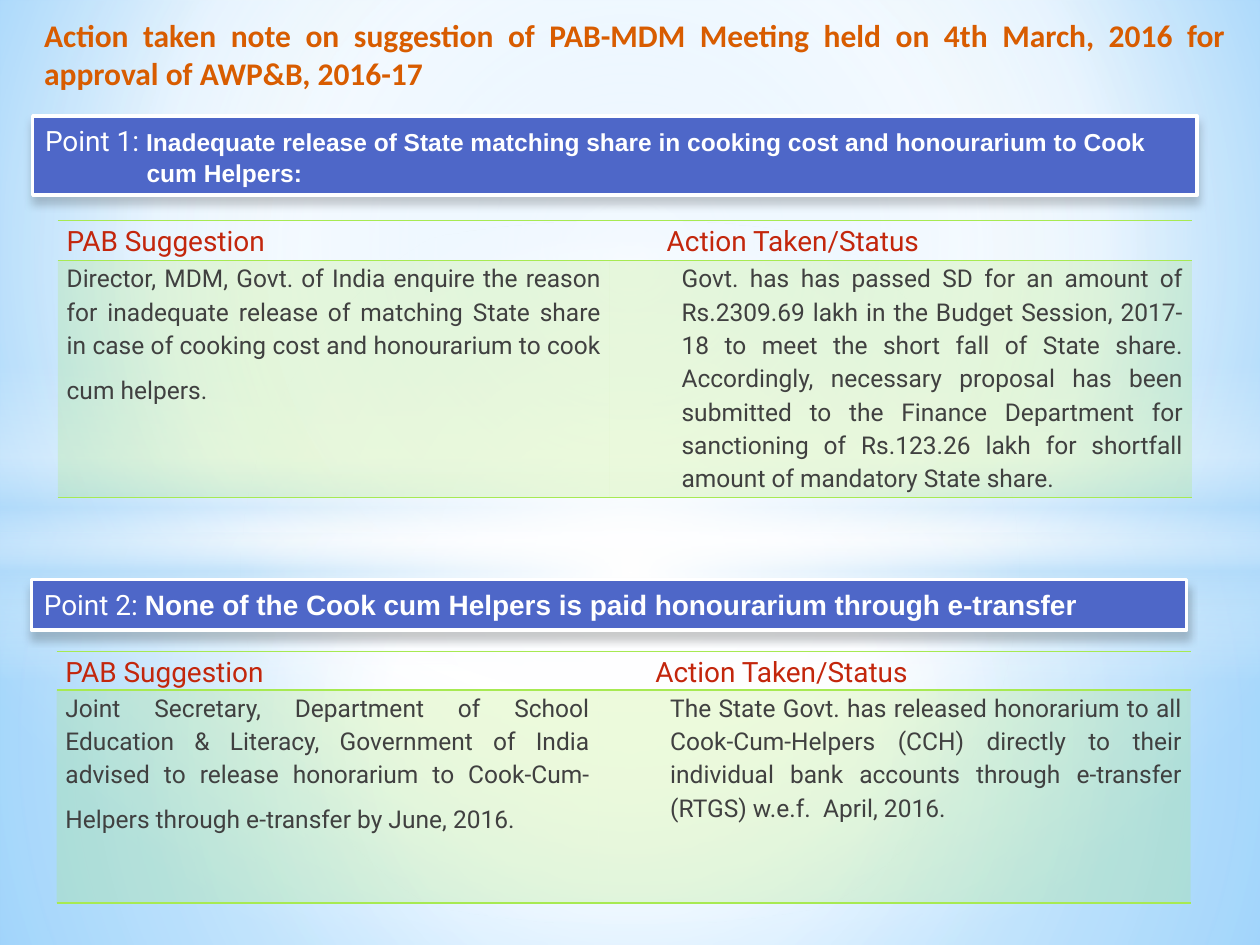
from dataclasses import dataclass

from lxml import etree
from pptx import Presentation
from pptx.dml.color import RGBColor
from pptx.enum.shapes import MSO_SHAPE
from pptx.enum.text import MSO_ANCHOR, MSO_AUTO_SIZE, PP_ALIGN
from pptx.oxml import parse_xml
from pptx.oxml.ns import qn
from pptx.util import Pt

RECT, OVAL = MSO_SHAPE.RECTANGLE, MSO_SHAPE.OVAL
TOP, MIDDLE = MSO_ANCHOR.TOP, MSO_ANCHOR.MIDDLE
GROW = MSO_AUTO_SIZE.SHAPE_TO_FIT_TEXT
LEFT, JUSTIFY = PP_ALIGN.LEFT, PP_ALIGN.JUSTIFY
NS = "http://schemas.openxmlformats.org/drawingml/2006/main"
PLAIN = "{2D5ABB26-0587-4C30-8999-92F81FD0307C}"
HEX = {
    "white": "FFFFFF", "black": "000000", "sky": "B4DCFA",
    "pale": "9ED5FF", "deep": "5BB9FF", "title": "D85C00",
    "bar": "4E67C8", "lime": "A7EA52", "head": "C3260C", "body": "404040",
}


@dataclass
class Run:
    text: str
    size: float
    font: str
    color: str
    bold: bool = False


@dataclass
class Para:
    runs: list[Run]
    align: PP_ALIGN = LEFT
    indent: float = 0
    line: float = 1
    after: float = 0


@dataclass
class Glow:
    kind: MSO_SHAPE
    box: tuple
    stops: list[tuple]
    ray: bool = False


@dataclass
class Bar:
    box: tuple
    paras: list[Para]


@dataclass
class Grid:
    box: tuple
    cols: tuple
    rows: tuple
    ask: str
    reply: str


def paint(props, stops: list[tuple], rect=(50, 50, 50, 50), ray: bool = False) -> None:
    marks = "".join(
        f'<a:gs pos="{at * 1000}"><a:srgbClr val="{HEX[name]}">'
        f'<a:alpha val="{alpha * 1000}"/></a:srgbClr></a:gs>'
        for at, name, alpha in stops)
    edges = " ".join(f'{side}="{v * 1000}"' for side, v in zip("ltrb", rect))
    way = ('<a:lin ang="5400000" scaled="0"/>' if ray else
           f'<a:path path="circle"><a:fillToRect {edges}/></a:path>')
    fill = parse_xml(f'<a:gradFill xmlns:a="{NS}" rotWithShape="1">'
                     f'<a:gsLst>{marks}</a:gsLst>{way}</a:gradFill>')
    old = props.find(qn("a:solidFill"))
    props.replace(old, fill)


def write(frame, paras: list[Para]) -> None:
    for i, item in enumerate(paras):
        para = frame.add_paragraph() if i else frame.paragraphs[0]
        para.alignment = item.align
        para.line_spacing = item.line
        para.space_before = Pt(0)
        para.space_after = Pt(item.after)
        props = para._p.get_or_add_pPr()
        props.set("marL", str(Pt(item.indent)))
        props.set("indent", "0")
        for part in item.runs:
            run = para.add_run()
            run.text = part.text
            run.font.size = Pt(part.size)
            run.font.name = part.font
            run.font.bold = part.bold
            run.font.color.rgb = RGBColor.from_string(HEX[part.color])


def place(shape, box: tuple) -> None:
    shape.left, shape.top, shape.width, shape.height = map(Pt, box)


def draw_glow(slide, glow: Glow) -> None:
    shape = slide.shapes.add_shape(glow.kind, *map(Pt, glow.box))
    shape.shadow.inherit = False
    shape.line.fill.background()
    shape.fill.solid()
    paint(shape._element.spPr, glow.stops, ray=glow.ray)


def draw_bar(slide, bar: Bar) -> None:
    shape = slide.shapes.add_shape(RECT, *map(Pt, bar.box))
    shape.fill.solid()
    shape.fill.fore_color.rgb = RGBColor.from_string(HEX["bar"])
    shape.line.color.rgb = RGBColor.from_string(HEX["white"])
    shape.line.width = Pt(2)
    shape.shadow.inherit = False
    shade = etree.SubElement(
        shape._element.spPr.find(qn("a:effectLst")), qn("a:outerShdw"),
        blurRad=str(Pt(5)), dist=str(Pt(4)), dir="5400000", rotWithShape="0")
    tint = etree.SubElement(shade, qn("a:srgbClr"), val=HEX["black"])
    etree.SubElement(tint, qn("a:alpha"), val="20000")
    frame = shape.text_frame
    frame.word_wrap = True
    frame.auto_size = GROW
    frame.vertical_anchor = MIDDLE
    write(frame, bar.paras)


def rule(cell) -> None:
    props = cell._tc.get_or_add_tcPr()
    for i, side in enumerate(("lnT", "lnB")):
        props.insert(i, parse_xml(
            f'<a:{side} xmlns:a="{NS}" w="{Pt(1)}"><a:solidFill>'
            f'<a:srgbClr val="{HEX["lime"]}"/></a:solidFill></a:{side}>'))


def draw_grid(slide, grid: Grid) -> None:
    frame = slide.shapes.add_table(2, 2, *map(Pt, grid.box))
    table = frame.table
    table.first_row = table.horz_banding = False
    table._tbl.tblPr.find(qn("a:tableStyleId")).text = PLAIN
    for col, width in zip(table.columns, grid.cols):
        col.width = Pt(width)
    for row, height in zip(table.rows, grid.rows):
        row.height = Pt(height)
    frame.height = Pt(grid.box[3])
    heads = [Para([Run(text, 16, "Roboto", "head")], LEFT, indent, 1.15, 3)
             for text, indent in (("PAB Suggestion", 0), ("Action Taken/Status", 27.5))]
    ask = Para([Run(grid.ask, 14, "Roboto", "body"), Run(" ", 20, "Roboto", "body")],
               JUSTIFY, 0, 1.15, 10)
    reply = Para([Run(grid.reply, 14, "Roboto", "body")], JUSTIFY, 36, 1.15, 10)
    for r, line in enumerate((heads, (ask, reply))):
        for c, para in enumerate(line):
            cell = table.cell(r, c)
            cell.margin_left = cell.margin_right = Pt(5)
            cell.margin_top = cell.margin_bottom = Pt(0)
            if r:
                cell.fill.solid()
                cell.fill.fore_color.rgb = RGBColor.from_string(HEX["lime"])
                tint = cell._tc.tcPr.find(".//" + qn("a:srgbClr"))
                etree.SubElement(tint, qn("a:alpha"), val="20000")
            else:
                cell.fill.background()
            rule(cell)
            write(cell.text_frame, [para])


GLOWS = [
    Glow(RECT, (0, 304.6, 720, 235.4), [(0, "white", 91), (37, "white", 76), (100, "sky", 79)]),
    Glow(RECT, (0, 0, 720, 304.6), [(0, "white", 89), (48, "white", 62), (100, "sky", 79)]),
    Glow(RECT, (0, 209, 720, 180), [(0, "white", 0), (29, "white", 30), (45, "sky", 40),
                                    (55, "white", 26), (65, "sky", 60), (100, "white", 0)], True),
    Glow(OVAL, (0, 126, 720, 402), [(0, "white", 100), (54, "white", 0)]),
]
BARS = [
    Bar((18.7, 66.2, 665.3, 45.4), [
        Para([Run("Point 1: ", 16, "Roboto", "white"),
              Run("Inadequate release of State matching share in cooking cost and honourarium to Cook",
                  14, "Arial", "white", True)]),
        Para([Run("cum Helpers:", 14, "Arial", "white", True)], indent=58)]),
    Bar((18, 331.2, 660.2, 28.8), [
        Para([Run("Point 2: ", 16, "Roboto", "white"),
              Run("None of the Cook cum Helpers is paid honourarium through e-transfer",
                  16, "Arial", "white", True)])]),
]
GRIDS = [
    Grid((33.1, 126, 648, 158.4), (315.4, 332.6), (23, 97.2),
         "Director, MDM, Govt. of India enquire the reason for inadequate release of matching State share in case of cooking cost and honourarium to cook cum helpers.",
         "Govt. has has passed SD for an amount of Rs.2309.69 lakh in the Budget Session, 2017-18 to meet the short fall of State share. Accordingly, necessary proposal has been submitted to the Finance Department for sanctioning of Rs.123.26 lakh for shortfall amount of mandatory State share. "),
    Grid((32.4, 372.2, 648, 144), (309.6, 338.4), (21.6, 121.7),
         "Joint Secretary, Department of School Education & Literacy, Government of India advised to release honorarium to Cook-Cum-Helpers through e-transfer by June, 2016.",
         "The State Govt. has released honorarium to all Cook-Cum-Helpers (CCH) directly to their individual bank accounts through e-transfer (RTGS) w.e.f.  April, 2016. "),
]


def main() -> None:
    deck = Presentation()
    deck.slide_width, deck.slide_height = Pt(720), Pt(540)
    slide = deck.slides.add_slide(deck.slide_layouts[5])
    slide.background.fill.solid()
    paint(slide.element.find(".//" + qn("p:bgPr")),
          [(0, "pale", 100), (60, "white", 100), (100, "deep", 100)], (20, 10, 20, 60))
    for glow in GLOWS:
        draw_glow(slide, glow)
    title = slide.shapes.title
    slide.shapes._spTree.append(title._element)
    place(title, (18, 5.8, 689.8, 50.4))
    frame = title.text_frame
    frame.word_wrap = True
    frame.auto_size = GROW
    frame.vertical_anchor = TOP
    write(frame, [Para([Run(
        "Action taken note on suggestion of PAB-MDM Meeting held on 4th March, 2016 for approval of AWP&B, 2016-17",
        18, "Calibri", "title", True)], JUSTIFY)])
    for bar, grid in zip(BARS, GRIDS):
        draw_bar(slide, bar)
        draw_grid(slide, grid)
    deck.save("out.pptx")


if __name__ == "__main__":
    main()
